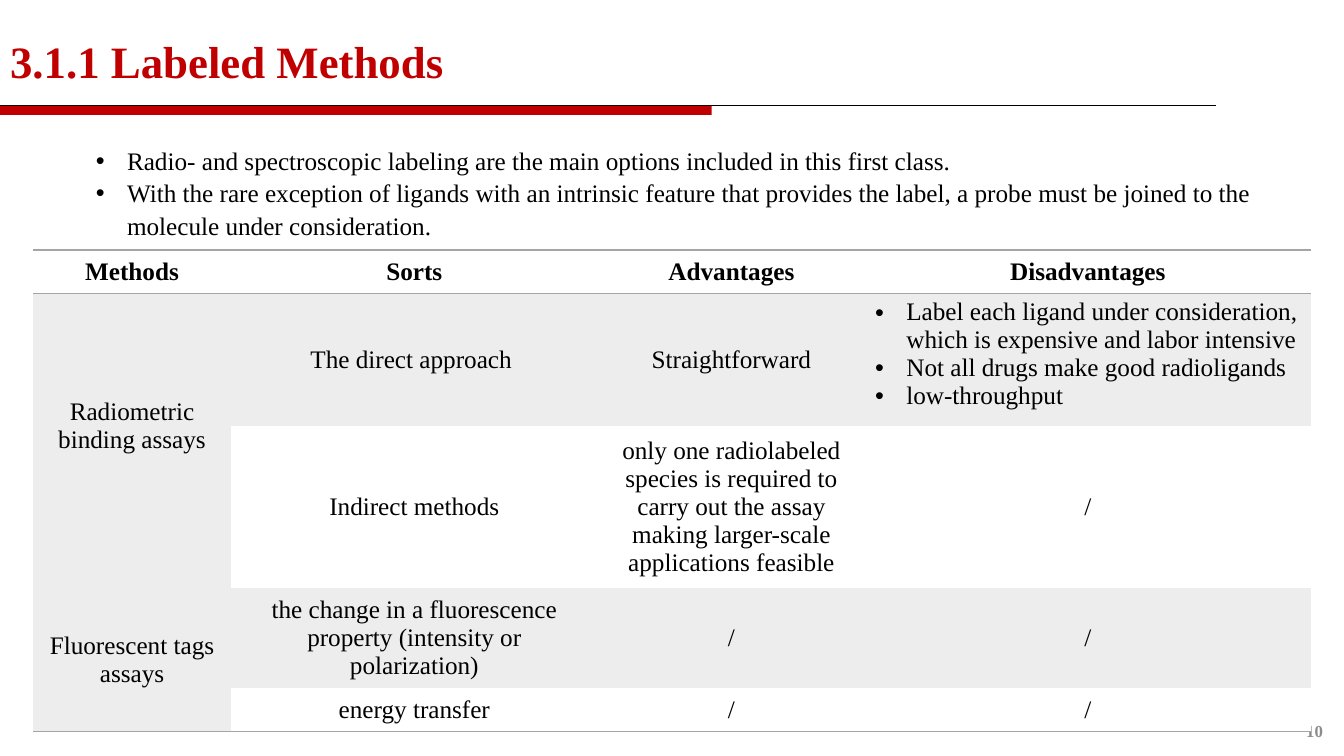
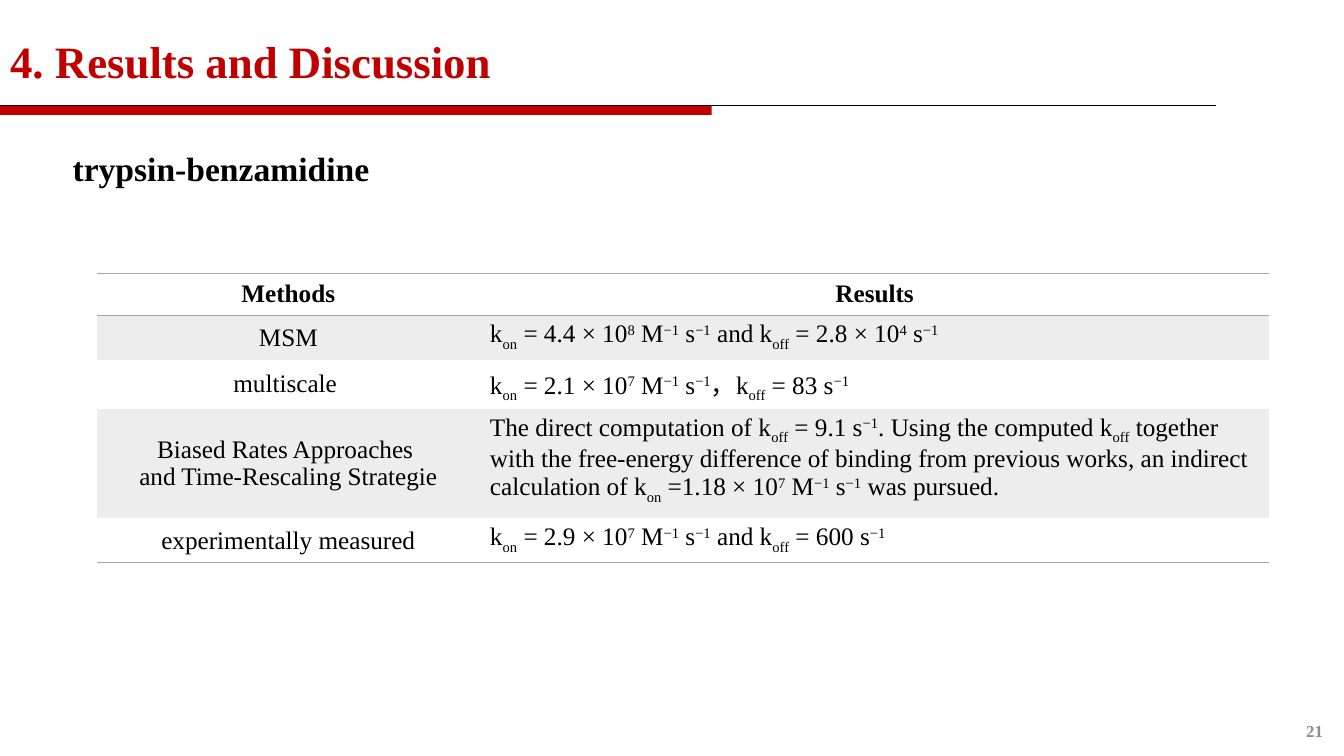
from lxml import etree
from pptx import Presentation
from pptx.dml.color import RGBColor
from pptx.enum import shapes, text
from pptx.oxml import ns
from pptx.util import Inches, Pt

RED = RGBColor(0xC0, 0x00, 0x00)
BLACK = RGBColor(0x00, 0x00, 0x00)
GRAY = RGBColor(0x8C, 0x8C, 0x8C)
RULE = RGBColor(0xA5, 0xA5, 0xA5)
STRIPE = RGBColor(0xED, 0xED, 0xED)
WHITE = RGBColor(0xFF, 0xFF, 0xFF)
FONT = "Times New Roman"
PLAIN_TABLE = "{2D5ABB26-0587-4C30-8999-92F81FD0307C}"
BASELINES = {"_": "-25000", "^": "30000"}
LEFT, CENTER, RIGHT = text.PP_ALIGN.LEFT, text.PP_ALIGN.CENTER, text.PP_ALIGN.RIGHT
TOP, MIDDLE, BOTTOM = text.MSO_ANCHOR.TOP, text.MSO_ANCHOR.MIDDLE, text.MSO_ANCHOR.BOTTOM


def set_bullet(p, bullet):
    pPr = p._p.get_or_add_pPr()
    indent = Inches(0.31) if bullet else 0
    pPr.set("marL", str(indent))
    pPr.set("indent", str(-indent))
    if bullet:
        etree.SubElement(pPr, ns.qn("a:buFont"), typeface="Arial")
        etree.SubElement(pPr, ns.qn("a:buChar"), char="•")
    else:
        etree.SubElement(pPr, ns.qn("a:buNone"))


def write(tf, content, size=18, color=BLACK, bold=False, align=LEFT, bullet=False, spacing=1.0):
    """Parts are split by |; a leading _ lowers a part and a leading ^ raises it."""
    lines = content if isinstance(content, list) else [content]
    for i, line in enumerate(lines):
        p = tf.paragraphs[0] if i == 0 else tf.add_paragraph()
        set_bullet(p, bullet)
        p.alignment = align
        p.space_before = Pt(0)
        p.line_spacing = spacing
        for part in line.split("|"):
            shift = BASELINES.get(part[0])
            r = p.add_run()
            r.text = part[1:] if shift else part
            r.font.name, r.font.size, r.font.bold = FONT, Pt(size), bold
            r.font.color.rgb = color
            if shift:
                r.font._element.set("baseline", shift)


def fill_box(sp, box, content, anchor=TOP, **fmt):
    sp.left, sp.top, sp.width, sp.height = (Inches(v) for v in box)
    tf = sp.text_frame
    tf.word_wrap = True
    tf.auto_size = text.MSO_AUTO_SIZE.NONE
    tf.vertical_anchor = anchor
    write(tf, content, **fmt)


def add_band(s, left, top, width, height):
    rule = s.shapes.add_connector(shapes.MSO_CONNECTOR.STRAIGHT, Inches(left), Inches(top),
                                  Inches(left + width), Inches(top))
    rule.line.color.rgb = BLACK
    rule.line.width = Pt(0.75)
    etree.SubElement(rule._element.spPr, ns.qn("a:effectLst"))
    bar = s.shapes.add_shape(shapes.MSO_SHAPE.RECTANGLE, Inches(left), Inches(top),
                             Inches(7.06), Inches(height))
    bar.shadow.inherit = False
    bar.fill.solid()
    bar.fill.fore_color.rgb = RED
    bar.line.fill.background()


def add_slide(prs, title, title_width, number):
    s = prs.slides.add_slide(prs.slide_layouts[1])
    fill_box(s.shapes.title, (0, 0, title_width, 0.92), title, anchor=BOTTOM,
             size=32, color=RED, bold=True)
    add_band(s, 0, 1.05, 12.06, 0.09)
    fill_box(s.shapes.add_textbox(0, 0, 0, 0), (10.22, 7.05, 3, 0.4), str(number),
             anchor=MIDDLE, size=12, color=GRAY, bold=True, align=RIGHT)
    return s


def set_border(cell, *sides):
    tcPr = cell._tc.get_or_add_tcPr()
    for i, side in enumerate(sides):
        ln = etree.Element(ns.qn("a:ln" + side), w=str(Pt(1)))
        fill = etree.SubElement(ln, ns.qn("a:solidFill"))
        etree.SubElement(fill, ns.qn("a:srgbClr"), val=str(RULE))
        tcPr.insert(i, ln)


def add_table(s, left, top, widths, heights, rows):
    sp = s.shapes.add_table(len(rows), len(widths), Inches(left), Inches(top),
                            Inches(sum(widths)), Inches(sum(heights)))
    table = sp.table
    table._tbl.tblPr.find(ns.qn("a:tableStyleId")).text = PLAIN_TABLE
    for column, width in zip(table.columns, widths):
        column.width = Inches(width)
    for i, (row, height, values) in enumerate(zip(table.rows, heights, rows)):
        row.height = Inches(height)
        for cell, value in zip(row.cells, values):
            cell.fill.solid()
            cell.fill.fore_color.rgb = STRIPE if i % 2 else WHITE
            cell.vertical_anchor = MIDDLE
            if i == 0:
                set_border(cell, "T", "B")
            elif i == len(rows) - 1:
                set_border(cell, "B")
            if value:
                fmt = {"align": CENTER, "bold": i == 0}
                if isinstance(value, tuple):
                    value, options = value
                    cell.vertical_anchor = TOP
                    fmt.update(options)
                write(cell.text_frame, value, **fmt)
    return table


def labeled_methods_slide(prs):
    s = add_slide(prs, "3.1.1 Labeled Methods", 8.59, 10)
    fill_box(s.placeholders[1], (0.85, 1.37, 11.96, 1.01), [
        "Radio- and spectroscopic labeling are the main options included in this first class.",
        "With the rare exception of ligands with an intrinsic feature that provides the label, "
        "a probe must be joined to the molecule under consideration.",
    ], bullet=True, spacing=1.07)
    drawbacks = [
        "Label each ligand under consideration, which is expensive and labor intensive",
        "Not all drugs make good radioligands",
        "low-throughput",
    ]
    table = add_table(s, 0.33, 2.48, [1.96, 3.64, 2.65, 4.42], [0.43, 1.32, 1.6, 1.0, 0.43], [
        ["Methods", "Sorts", "Advantages", "Disadvantages"],
        ["Radiometric binding assays", "The direct approach ", "Straightforward",
         (drawbacks, {"align": LEFT, "bullet": True})],
        [None, "Indirect methods",
         "only one radiolabeled species is required to carry out the assay making "
         "larger-scale applications feasible", "/"],
        ["Fluorescent tags assays",
         "the change in a fluorescence property (intensity or polarization)", "/", "/"],
        [None, "energy transfer", "/", "/"],
    ])
    for first in (1, 3):
        table.cell(first, 0).merge(table.cell(first + 1, 0))
    table.cell(1, 0).margin_bottom = Inches(0.33)
    set_border(table.cell(3, 0), "B")


def results_slide(prs):
    s = add_slide(prs, "4. Results and Discussion", 6.01, 21)
    fill_box(s.placeholders[1], (0.62, 1.42, 5.85, 0.5), "trypsin-benzamidine",
             size=24, bold=True)
    left = {"align": LEFT}
    per_second = " s|^−1"
    per_molar = "| M|^−1|" + per_second
    add_table(s, 0.96, 2.71, [3.8, 7.83], [0.42, 0.44, 0.44, 1.09, 0.44], [
        ["Methods", "Results"],
        ["MSM", (f"k|_on| = 4.4 × 10|^8{per_molar}| and k|_off| = 2.8 × 10|^4|{per_second}", left)],
        ["multiscale ", (f"k|_on| = 2.1 × 10|^7{per_molar}|，k|_off| = 83{per_second}", left)],
        [["Biased Rates Approaches ", "and Time-Rescaling Strategie"],
         (f"The direct computation of k|_off| = 9.1{per_second}|. Using the computed k|_off"
          "| together with the free-energy difference of binding from previous works, "
          f"an indirect calculation of k|_on| =1.18 × 10|^7{per_molar}| was pursued.", left)],
        ["experimentally measured",
         (f"k|_on| = 2.9 × 10|^7{per_molar}| and k|_off| = 600{per_second}", left)],
    ])


def main():
    prs = Presentation()
    prs.slide_width, prs.slide_height = Inches(13.33), Inches(7.5)
    labeled_methods_slide(prs)
    results_slide(prs)
    prs.save("out.pptx")


if __name__ == "__main__":
    main()
